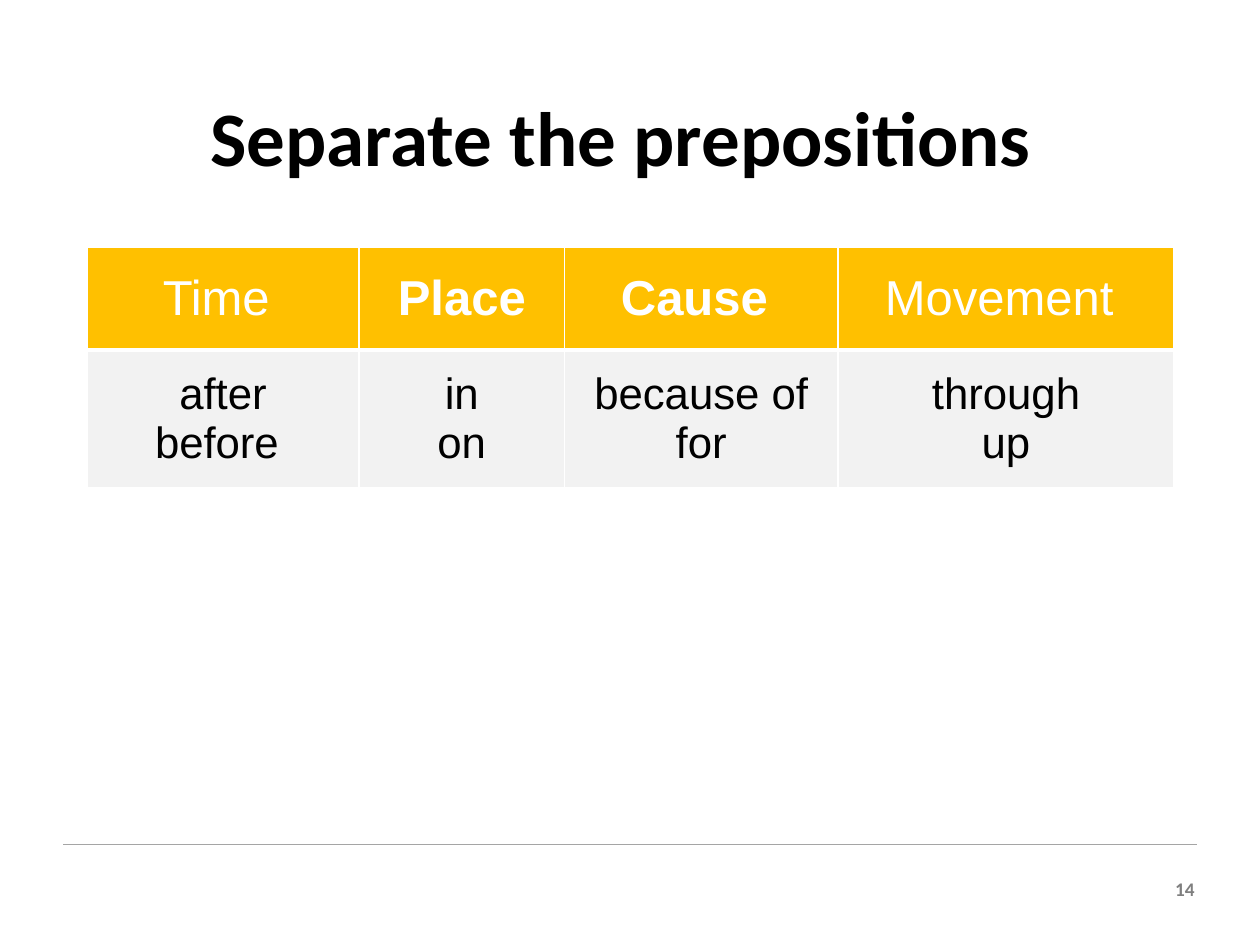
from dataclasses import dataclass

from lxml import etree
from pptx import Presentation
from pptx.dml.color import RGBColor
from pptx.enum.shapes import MSO_CONNECTOR
from pptx.enum.text import MSO_ANCHOR, MSO_AUTO_SIZE, PP_ALIGN
from pptx.oxml.ns import qn
from pptx.slide import Slide
from pptx.table import _Cell
from pptx.text.text import TextFrame
from pptx.util import Pt

STRAIGHT = MSO_CONNECTOR.STRAIGHT
MIDDLE = MSO_ANCHOR.MIDDLE
TOP = MSO_ANCHOR.TOP
CENTER = PP_ALIGN.CENTER
RIGHT = PP_ALIGN.RIGHT
GROW = MSO_AUTO_SIZE.SHAPE_TO_FIT_TEXT
FIXED = MSO_AUTO_SIZE.NONE

BLACK = RGBColor(0x00, 0x00, 0x00)
WHITE = RGBColor(0xFF, 0xFF, 0xFF)
GOLD = RGBColor(0xFF, 0xC0, 0x00)
PALE_GRAY = RGBColor(0xF2, 0xF2, 0xF2)
RULE_GRAY = RGBColor(0xA5, 0xA5, 0xA5)
NUMBER_GRAY = RGBColor(0x7F, 0x7F, 0x7F)


@dataclass(frozen=True)
class TextStyle:
    font: str
    size: float
    color: RGBColor
    bold: bool
    align: PP_ALIGN = CENTER
    line_spacing: float = 1.0


@dataclass(frozen=True)
class Label:
    text: str
    left: float
    top: float
    width: float
    height: float
    style: TextStyle
    anchor: MSO_ANCHOR
    auto_size: MSO_AUTO_SIZE


@dataclass(frozen=True)
class PrepositionGroup:
    heading: str
    bold: bool
    words: list[str]
    width: float


TITLE_STYLE = TextStyle("Calibri", 44, BLACK, True, CENTER, 0.9)
NUMBER_STYLE = TextStyle("Calibri", 11, NUMBER_GRAY, True, RIGHT)

LABELS = [
    Label("14", 662.4, 497.5, 27.4, 20.9, NUMBER_STYLE, TOP, GROW),
    Label("Separate the prepositions ", 49.7, 28.8, 620.6, 104.4, TITLE_STYLE, MIDDLE, FIXED),
]

GROUPS = [
    PrepositionGroup("Time ", False, ["after", "before "], 155.5),
    PrepositionGroup("Place", True, ["in", "on"], 117.4),
    PrepositionGroup("Cause ", True, ["because of", "for"], 156.2),
    PrepositionGroup("Movement ", False, ["through", "up"], 192.2),
]

TABLE_LEFT, TABLE_TOP = 49.7, 141.1
HEADING_HEIGHT, WORDS_HEIGHT = 59, 78.5


def write_lines(frame: TextFrame, lines: list[str], style: TextStyle) -> None:
    frame.text = "\n".join(lines)
    for para in frame.paragraphs:
        para.alignment = style.align
        para.line_spacing = style.line_spacing
        para.font.name = style.font
        para.font.size = Pt(style.size)
        para.font.bold = style.bold
        para.font.color.rgb = style.color


def add_label(page: Slide, label: Label) -> None:
    box = page.shapes.add_textbox(
        Pt(label.left), Pt(label.top), Pt(label.width), Pt(label.height)
    )
    frame = box.text_frame
    frame.word_wrap = True
    frame.auto_size = label.auto_size
    frame.vertical_anchor = label.anchor
    write_lines(frame, [label.text], label.style)


def add_rule(page: Slide, left: float, right: float, top: float) -> None:
    rule = page.shapes.add_connector(STRAIGHT, Pt(left), Pt(top), Pt(right), Pt(top))
    rule.line.color.rgb = RULE_GRAY
    rule.line.width = Pt(0.75)
    etree.SubElement(rule._element.spPr, qn("a:effectLst"))


def set_borders(cell: _Cell, widths: dict[str, float]) -> None:
    properties = cell._tc.get_or_add_tcPr()
    for position, (side, width) in enumerate(widths.items()):
        border = etree.Element(qn(f"a:{side}"), w=str(Pt(width)))
        fill = etree.SubElement(border, qn("a:solidFill"))
        etree.SubElement(fill, qn("a:srgbClr"), val=str(WHITE))
        properties.insert(position, border)


def fill_cell(
    cell: _Cell, lines: list[str], style: TextStyle, fill: RGBColor, top: float, bottom: float
) -> None:
    cell.fill.solid()
    cell.fill.fore_color.rgb = fill
    cell.vertical_anchor = MIDDLE
    cell.margin_left = cell.margin_right = Pt(6.75)
    cell.margin_top = cell.margin_bottom = Pt(3.2)
    set_borders(cell, {"lnL": 1, "lnR": 1, "lnT": top, "lnB": bottom})
    write_lines(cell.text_frame, lines, style)


def add_preposition_table(page: Slide, groups: list[PrepositionGroup]) -> None:
    table = page.shapes.add_table(
        2,
        len(groups),
        Pt(TABLE_LEFT),
        Pt(TABLE_TOP),
        Pt(sum(group.width for group in groups)),
        Pt(HEADING_HEIGHT + WORDS_HEIGHT),
    ).table
    table.horz_banding = False
    table.rows[0].height = Pt(HEADING_HEIGHT)
    table.rows[1].height = Pt(WORDS_HEIGHT)
    words_style = TextStyle("Arial", 25, BLACK, False)
    for column, group in enumerate(groups):
        table.columns[column].width = Pt(group.width)
        heading_style = TextStyle("Arial", 28, WHITE, group.bold)
        fill_cell(table.cell(0, column), [group.heading], heading_style, GOLD, 1, 3)
        fill_cell(table.cell(1, column), group.words, words_style, PALE_GRAY, 3, 1)


def main() -> None:
    deck = Presentation()
    deck.slide_width, deck.slide_height = Pt(720), Pt(540)
    page = deck.slides.add_slide(deck.slide_layouts[6])
    add_rule(page, 36, 684, 482.4)
    for label in LABELS:
        add_label(page, label)
    add_preposition_table(page, GROUPS)
    deck.save("out.pptx")


if __name__ == "__main__":
    main()
